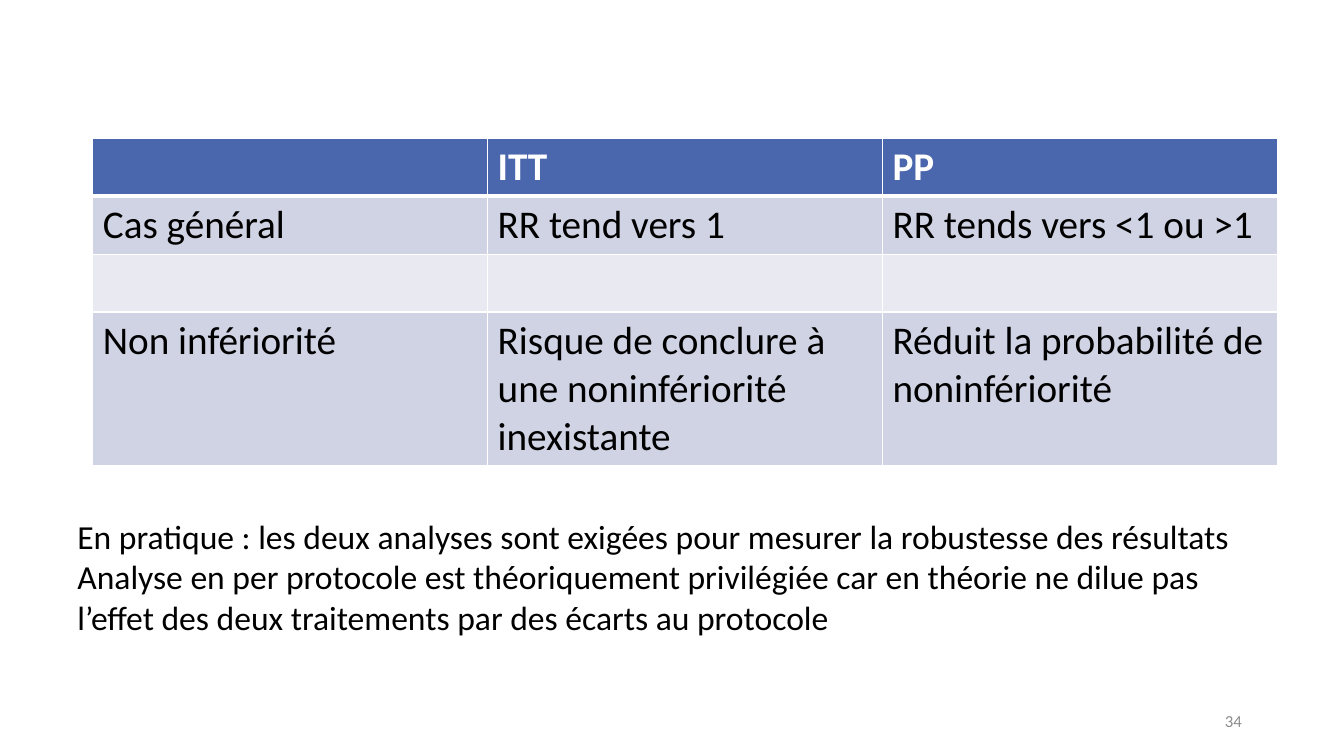
"""Build the slide comparing ITT and PP analyses."""
from lxml import etree
from pptx import Presentation
from pptx.dml.color import RGBColor
from pptx.enum import text
from pptx.oxml import ns
from pptx.util import Cm, Pt

WHITE = RGBColor(0xFF, 0xFF, 0xFF)
BLACK = RGBColor(0x00, 0x00, 0x00)
GREY = RGBColor(0x8C, 0x8C, 0x8C)
BLUE = RGBColor(0x4A, 0x66, 0xAC)
BAND_DARK = RGBColor(0xD0, 0xD3, 0xE3)
BAND_LIGHT = RGBColor(0xE9, 0xEA, 0xF1)

ROWS = [
    ("", "ITT", "PP"),
    ("Cas général", "RR tend vers 1", "RR tends vers <1 ou >1"),
    ("", "", ""),
    ("Non infériorité", "Risque de conclure à une noninfériorité inexistante",
     "Réduit la probabilité de noninfériorité"),
]
ROW_HEIGHTS = (1.46, 1.46, 1.46, 3.87)
COL_WIDTH = 9.95
PRACTICE = [
    "En pratique : les deux analyses sont exigées pour mesurer la robustesse des résultats",
    "Analyse en per protocole est théoriquement privilégiée car en théorie ne dilue pas "
    "l’effet des deux traitements par des écarts au protocole",
]


def add_run(p, words, color, **fmt):
    r = p.add_run()
    r.text = words
    for name, value in {"name": "Calibri", **fmt}.items():
        setattr(r.font, name, value)
    r.font.color.rgb = color


def add_text(s, box, lines, color, size, **fmt):
    tf = s.shapes.add_textbox(*map(Cm, box)).text_frame
    tf.word_wrap = True
    for name, value in fmt.items():
        setattr(tf, name, value)
    for i, line in enumerate(lines):
        p = tf.add_paragraph() if i else tf.paragraphs[0]
        add_run(p, line, color, size=Pt(size))
    return tf


def set_borders(cell, **widths):
    tc_pr = cell._tc.get_or_add_tcPr()
    for side, width in widths.items():
        ln = etree.SubElement(tc_pr, ns.qn(f"a:ln{side}"), w=str(Pt(width)))
        fill = etree.SubElement(ln, ns.qn("a:solidFill"))
        etree.SubElement(fill, ns.qn("a:srgbClr"), val=str(WHITE))


def add_comparison(s, left, top):
    n_cols = len(ROWS[0])
    table = s.shapes.add_table(len(ROWS), n_cols, Cm(left), Cm(top),
                               Cm(COL_WIDTH * n_cols), Cm(sum(ROW_HEIGHTS))).table
    for col in table.columns:
        col.width = Cm(COL_WIDTH)
    for i, (words, height) in enumerate(zip(ROWS, ROW_HEIGHTS)):
        table.rows[i].height = Cm(height)
        header = i == 0
        band = BLUE if header else (BAND_LIGHT, BAND_DARK)[i % 2]
        for j, word in enumerate(words):
            cell = table.cell(i, j)
            set_borders(cell, L=1, R=1, T=3 if i == 1 else 1, B=3 if header else 1)
            cell.fill.solid()
            cell.fill.fore_color.rgb = band
            if word:
                add_run(cell.text_frame.paragraphs[0], word,
                        WHITE if header else BLACK, size=Pt(28), bold=header)


def main():
    prs = Presentation()
    prs.slide_width, prs.slide_height = Cm(33.87), Cm(19.05)
    s = prs.slides.add_slide(prs.slide_layouts[6])
    add_comparison(s, 2.34, 3.48)
    tf = add_text(s, (23.93, 17.65, 7.62, 1.02), ["34"], GREY, 12,
                  vertical_anchor=text.MSO_ANCHOR.MIDDLE)
    tf.paragraphs[0].alignment = text.PP_ALIGN.RIGHT
    add_text(s, (1.7, 12.88, 29.85, 3.33), PRACTICE, BLACK, 24,
             auto_size=text.MSO_AUTO_SIZE.SHAPE_TO_FIT_TEXT)
    prs.save("out.pptx")


if __name__ == "__main__":
    main()
